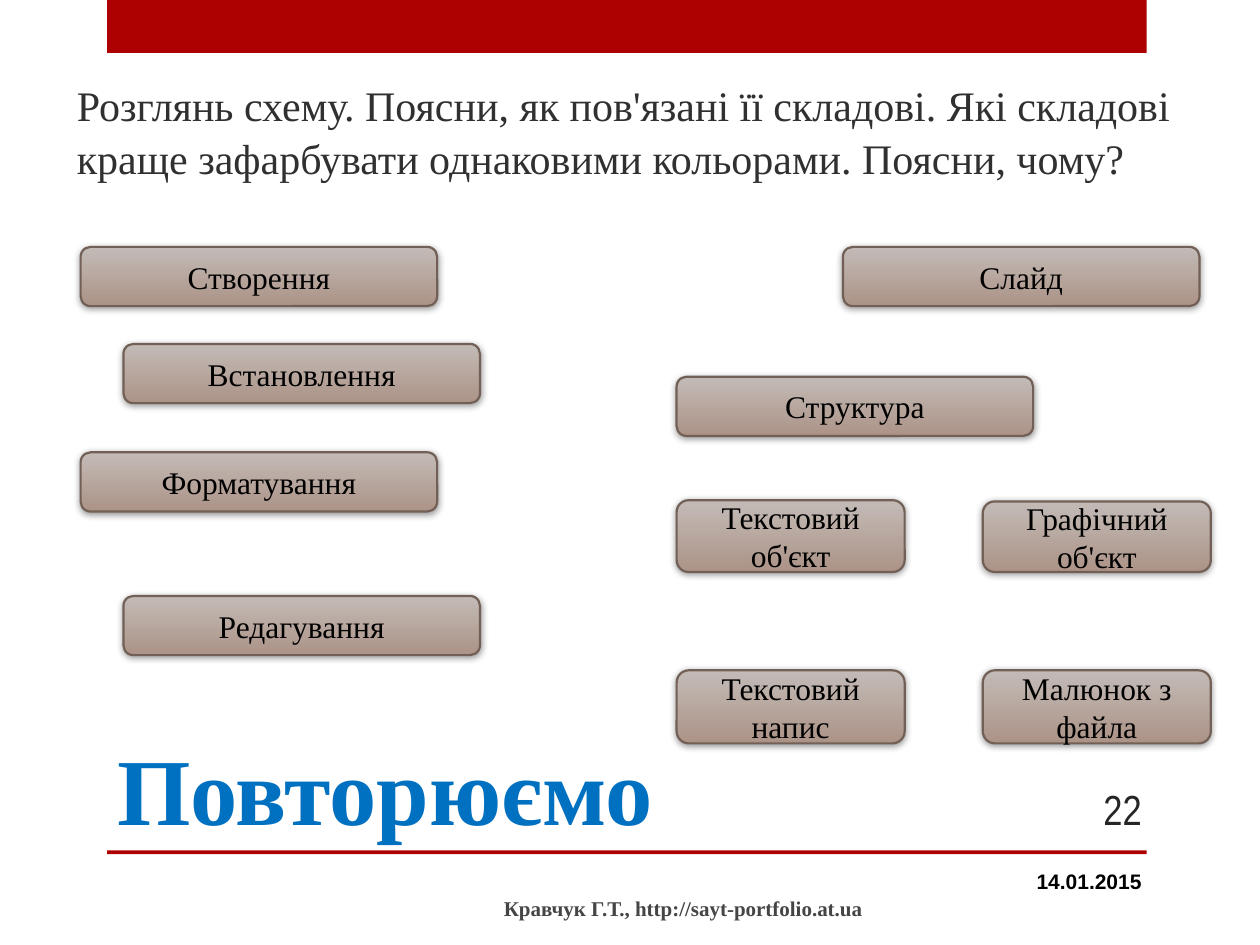
"""Build the review slide with a scheme of presentation terms."""
from typing import NamedTuple

from lxml import etree
from pptx import Presentation
from pptx import util as u
from pptx.dml.color import RGBColor
from pptx.enum import shapes, text
from pptx.oxml import ns

HUES = {
    "red": "AD0101", "blue": "0070C0", "body": "303030", "foot": "454545",
    "page": "262626", "black": "000000", "top": "C3BBB7", "base": "AC9387",
    "edge": "726056",
}
SERIF = "Times New Roman"
LEFT, RIGHT = text.PP_ALIGN.LEFT, text.PP_ALIGN.RIGHT
MID = text.MSO_ANCHOR.MIDDLE


class Box(NamedTuple):
    x: float
    y: float
    w: float
    h: float


class Style(NamedTuple):
    size: float
    hue: str
    face: str = SERIF
    bold: bool = False
    align: text.PP_ALIGN = LEFT


class Node(NamedTuple):
    words: str
    box: Box


class Note(NamedTuple):
    words: str
    box: Box
    style: Style


def wide(words: str, x: float, y: float) -> Node:
    """Describe a one-line node."""
    return Node(words, Box(x, y, 2.83, 0.47))


def small(words: str, x: float, y: float, h: float) -> Node:
    """Describe a two-line node."""
    return Node(words, Box(x, y, 1.81, h))


BARS = [Box(0.85, 0, 8.25, 0.42), Box(0.85, 6.75, 8.25, 0.03)]
NOTES = [
    Note("14.01.2015", Box(6.83, 6.79, 2.33, 0.4),
         Style(12, "black", "Arial", True, RIGHT)),
    Note("Кравчук Г.Т., http://sayt-portfolio.at.ua",
         Box(3.9, 7.06, 5.17, 0.3), Style(12, "foot", bold=True)),
    Note("22", Box(8.33, 6.22, 0.83, 0.4),
         Style(24, "page", "Arial Narrow", align=RIGHT)),
]
NODES = [
    wide("Слайд", 6.69, 1.96),
    wide("Створення", 0.64, 1.96),
    wide("Встановлення", 0.98, 2.73),
    wide("Форматування", 0.64, 3.59),
    wide("Редагування", 0.98, 4.73),
    wide("Структура", 5.37, 2.99),
    small("Малюнок з файла", 7.8, 5.32, 0.58),
    small("Графічний об'єкт", 7.8, 3.98, 0.56),
    small("Текстовий об'єкт", 5.37, 3.97, 0.57),
    small("Текстовий напис", 5.37, 5.32, 0.58),
]


def tint(name: str) -> RGBColor:
    """Look up a colour."""
    return RGBColor.from_string(HUES[name])


def span(box: Box) -> list[u.Length]:
    """Turn a box into lengths."""
    return [u.Inches(side) for side in box]


def place(shape, box: Box) -> None:
    """Move and size a shape."""
    shape.left, shape.top, shape.width, shape.height = span(box)


def write(shape, words: str, style: Style, anchor=MID):
    """Fill a shape with one styled paragraph."""
    frame = shape.text_frame
    frame.text = words
    frame.word_wrap = True
    frame.auto_size = text.MSO_AUTO_SIZE.NONE
    frame.vertical_anchor = anchor
    para = frame.paragraphs[0]
    para.alignment = style.align
    para.space_before = u.Pt(0)
    font = para.font
    font.name, font.size, font.bold = style.face, u.Pt(style.size), style.bold
    font.color.rgb = tint(style.hue)
    return para


def shade(shape) -> None:
    """Give a shape a soft drop shadow."""
    shape.shadow.inherit = False
    effects = shape.element.spPr.find(ns.qn("a:effectLst"))
    drop = etree.SubElement(
        effects, ns.qn("a:outerShdw"), blurRad=str(u.Pt(4)),
        dist=str(u.Pt(1)), dir=str(88 * 60000), rotWithShape="0")
    hue = etree.SubElement(drop, ns.qn("a:srgbClr"), val=HUES["black"])
    etree.SubElement(hue, ns.qn("a:alpha"), val="40000")


def draw_bar(slide, box: Box) -> None:
    """Draw a plain red bar."""
    bar = slide.shapes.add_shape(shapes.MSO_SHAPE.RECTANGLE, *span(box))
    bar.shadow.inherit = False
    bar.fill.solid()
    bar.fill.fore_color.rgb = tint("red")
    bar.line.fill.background()


def draw_node(slide, node: Node) -> None:
    """Draw a rounded node of the scheme."""
    shape = slide.shapes.add_shape(
        shapes.MSO_SHAPE.ROUNDED_RECTANGLE, *span(node.box))
    shape.fill.gradient()
    shape.fill.gradient_angle = 270
    for stop, name in zip(shape.fill.gradient_stops, ("top", "base")):
        stop.color.rgb = tint(name)
    shape.line.color.rgb = tint("edge")
    shape.line.width = u.Pt(1.25)
    shade(shape)
    write(shape, node.words, Style(18, "black", align=text.PP_ALIGN.CENTER))


def main() -> None:
    """Build and save the slide."""
    deck = Presentation()
    deck.slide_width, deck.slide_height = u.Inches(10), u.Inches(7.5)
    slide = deck.slides.add_slide(deck.slide_layouts[1])
    for bar in BARS:
        draw_bar(slide, bar)

    title, body = slide.placeholders
    place(title, Box(0.83, 5.72, 7.42, 1.03))
    write(title, "Повторюємо", Style(54, "blue", bold=True),
          text.MSO_ANCHOR.BOTTOM)

    place(body, Box(0.51, 0.52, 9, 1.02))
    task = ("Розглянь схему. Поясни, як пов'язані її складові. Які складові "
            "краще зафарбувати однаковими кольорами. Поясни, чому?")
    body.text_frame.text = task
    para = write(body, task, Style(24, "body"))
    para.line_spacing = 1.05
    props = para._p.get_or_add_pPr()
    props.set("marL", "0")
    props.set("indent", "0")
    bullet = etree.Element(ns.qn("a:buNone"))
    props.find(ns.qn("a:defRPr")).addprevious(bullet)

    for note in NOTES:
        write(slide.shapes.add_textbox(*span(note.box)), note.words, note.style)
    for node in NODES:
        draw_node(slide, node)
    deck.save("out.pptx")


if __name__ == "__main__":
    main()
